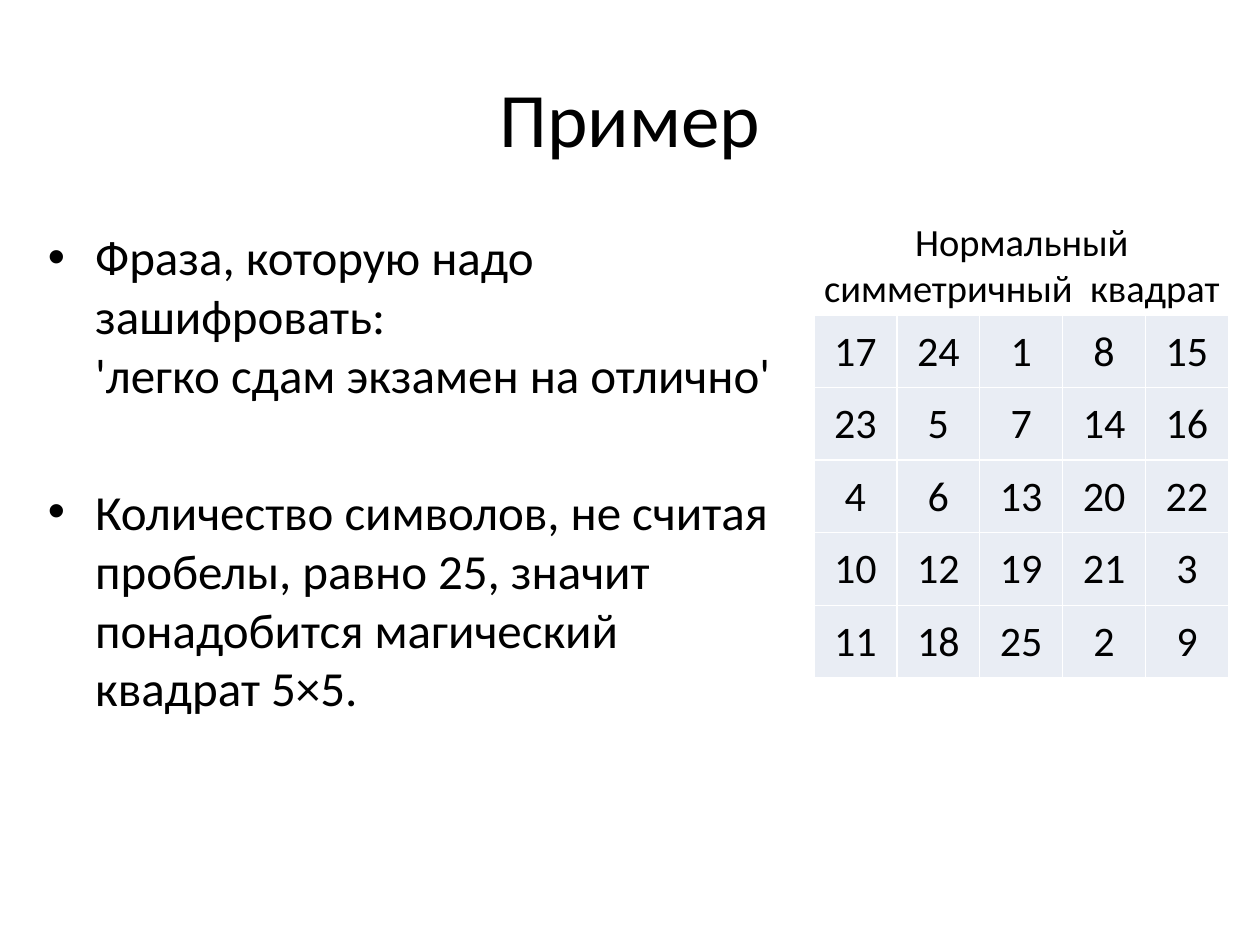
from pptx import Presentation
from pptx.dml.color import RGBColor
from pptx.enum.text import MSO_ANCHOR, MSO_AUTO_SIZE, PP_ALIGN
from pptx.oxml import parse_xml
from pptx.oxml.ns import nsdecls
from pptx.util import Inches, Pt

CENTER = PP_ALIGN.CENTER
MIDDLE = MSO_ANCHOR.MIDDLE
GROW = MSO_AUTO_SIZE.SHAPE_TO_FIT_TEXT
FONT = "Calibri"
BLACK, WHITE, CELL_FILL = "000000", "FFFFFF", "E9EDF4"
TITLE_AND_CONTENT = 1

PHRASES = [
    "Фраза, которую надо зашифровать:\v'легко сдам экзамен на отлично'",
    "Количество символов, не считая пробелы, равно 25, "
    "значит понадобится магический квадрат 5×5.",
]
MAGIC_SQUARE = [
    [17, 24, 1, 8, 15],
    [23, 5, 7, 14, 16],
    [4, 6, 13, 20, 22],
    [10, 12, 19, 21, 3],
    [11, 18, 25, 2, 9],
]


def color(value):
    """Turn a hex string into a colour."""
    return RGBColor.from_string(value)


def place(shape, left, top, width, height):
    """Move and size a shape, in inches."""
    shape.left, shape.top = Inches(left), Inches(top)
    shape.width, shape.height = Inches(width), Inches(height)


def format_text(frame, size, align=None):
    """Apply font, size and alignment to all the text in a frame."""
    for para in frame.paragraphs:
        para.alignment = align
        for span in para.runs:
            span.font.name = FONT
            span.font.size = Pt(size)
            span.font.color.rgb = color(BLACK)


def add_title(slide, text):
    """Fill the title placeholder."""
    title = slide.shapes.title
    place(title, 0.5, 0.3, 9, 1.25)
    title.text_frame.text = text
    title.text_frame.vertical_anchor = MIDDLE
    format_text(title.text_frame, 44, CENTER)


def add_bullets(slide, phrases):
    """Fill the body placeholder with widely spaced bullets."""
    body = slide.placeholders[1]
    place(body, 0.28, 1.75, 6.06, 4.95)
    frame = body.text_frame
    frame.text = "\n".join(phrases)
    for para in frame.paragraphs[1:]:
        para.space_before = Pt(44.6)
    format_text(frame, 28)


def add_caption(slide, text):
    """Add the centred caption above the table."""
    box = slide.shapes.add_textbox(
        Inches(6.34), Inches(1.68), Inches(3.54), Inches(0.84))
    frame = box.text_frame
    frame.word_wrap = True
    frame.auto_size = GROW
    frame.text = text
    format_text(frame, 22, CENTER)


def add_borders(cell):
    """Draw thin white lines on the four sides of a cell."""
    properties = cell._tc.get_or_add_tcPr()
    for index, side in enumerate(("lnL", "lnR", "lnT", "lnB")):
        line = parse_xml(
            f'<a:{side} {nsdecls("a")} w="{Pt(1)}"><a:solidFill>'
            f'<a:srgbClr val="{WHITE}"/></a:solidFill></a:{side}>')
        properties.insert(index, line)


def fill_cell(cell, value):
    """Write a number into a cell and format the cell."""
    cell.text_frame.text = str(value)
    cell.vertical_anchor = MIDDLE
    cell.margin_left = cell.margin_right = cell.margin_top = Inches(0.01)
    cell.margin_bottom = 0
    cell.fill.solid()
    cell.fill.fore_color.rgb = color(CELL_FILL)
    format_text(cell.text_frame, 24, CENTER)
    add_borders(cell)


def add_number_table(slide, rows):
    """Add the table of numbers."""
    table = slide.shapes.add_table(
        len(rows), len(rows[0]),
        Inches(6.46), Inches(2.5), Inches(3.29), Inches(2.88)).table
    table.first_row = False
    table.horz_banding = False
    for row_index, row in enumerate(rows):
        for column_index, value in enumerate(row):
            fill_cell(table.cell(row_index, column_index), value)


def main():
    """Build the slide and save the deck."""
    deck = Presentation()
    deck.slide_width, deck.slide_height = Inches(10), Inches(7.5)
    slide = deck.slides.add_slide(deck.slide_layouts[TITLE_AND_CONTENT])
    add_title(slide, "Пример")
    add_bullets(slide, PHRASES)
    add_caption(slide, "Нормальный\vсимметричный  квадрат")
    add_number_table(slide, MAGIC_SQUARE)
    deck.save("out.pptx")


if __name__ == "__main__":
    main()
